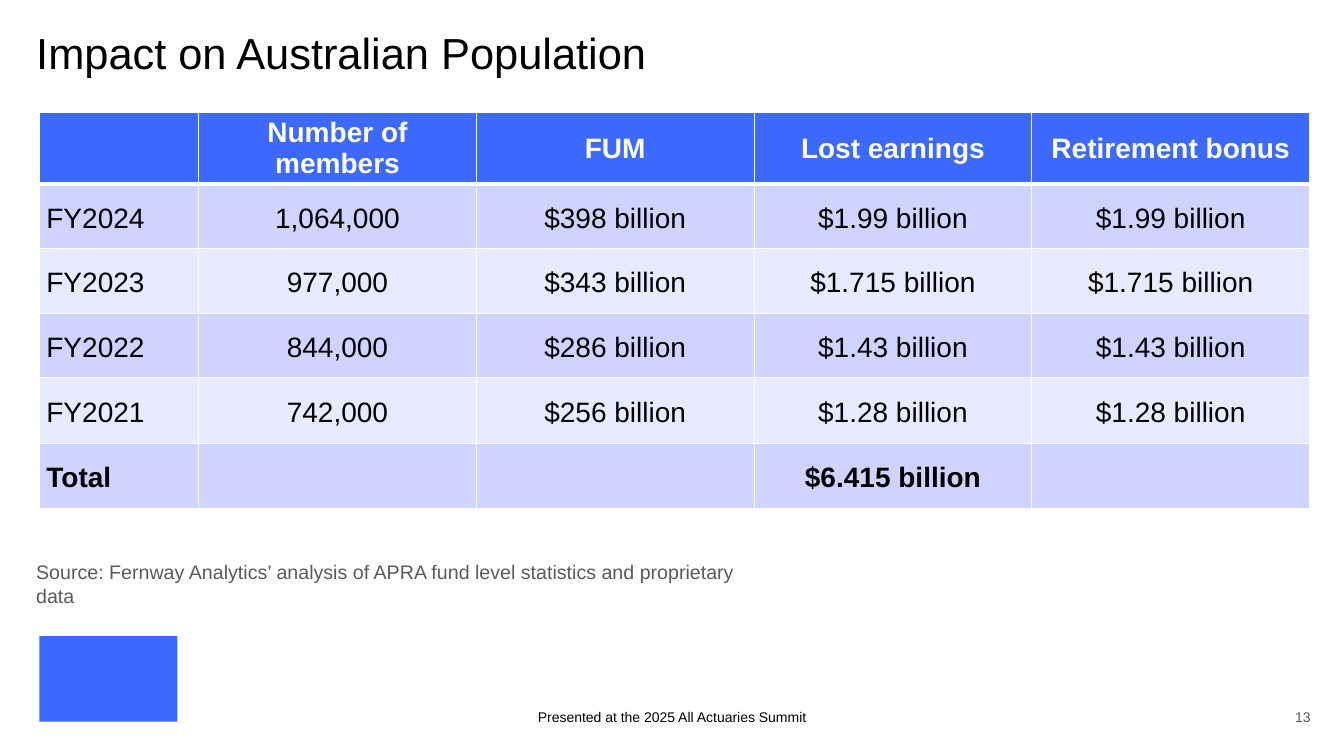
from lxml import etree
from pptx import Presentation
from pptx import util as u
from pptx.dml.color import RGBColor
from pptx.enum import shapes, text
from pptx.oxml import ns

TITLE = "Impact on Australian Population"
HEAD = ["", "Number of members", "FUM", "Lost earnings", "Retirement bonus"]
YEARS = [
    ("FY2024", "1,064,000", "$398 billion", "$1.99 billion", "$1.99 billion"),
    ("FY2023", "977,000", "$343 billion", "$1.715 billion", "$1.715 billion"),
    ("FY2022", "844,000", "$286 billion", "$1.43 billion", "$1.43 billion"),
    ("FY2021", "742,000", "$256 billion", "$1.28 billion", "$1.28 billion"),
]
TOTAL = ("Total", "", "", "$6.415 billion", "")
SOURCE = ("Source: Fernway Analytics’ analysis of APRA fund level "
          "statistics and proprietary data")
EVENT = "Presented at the 2025 All Actuaries Summit"
PAGE = "13"

THEME = {
    "font": "Arial", "blue": "3C69FF", "white": "FFFFFF", "ink": "000000",
    "grey": "5B5B5B", "bands": ("CED4FF", "E8EBFF"),
    "title": 31, "cell": 20, "note": 14, "foot": 10,
}
WIDE, HIGH = 13.33, 7.5
LEFT, TOP, SPAN = 0.39, 1.12, 12.6
FIRST = 1.58
ROWS = (0.63, 0.64, 0.64, 0.64, 0.65, 0.65)
FOOT = 7.0
ALIGN = text.PP_ALIGN
ANCHOR = text.MSO_ANCHOR


def write(frame, words, size, color="ink", bold=False, align=ALIGN.LEFT,
          lead=None, after=None):
    para = frame.paragraphs[0]
    para.alignment = align
    if lead:
        para.line_spacing = lead
    if after:
        para.space_after = u.Pt(after)
    run = para.add_run()
    run.text = words
    run.font.name = THEME["font"]
    run.font.size = u.Pt(THEME[size])
    run.font.bold = bold
    run.font.color.rgb = RGBColor.from_string(THEME[color])


def label(slide, words, place, size, inset=0, anchor=ANCHOR.TOP, **form):
    frame = slide.shapes.add_textbox(*map(u.Inches, place)).text_frame
    frame.word_wrap = True
    frame.vertical_anchor = anchor
    frame.margin_left = frame.margin_right = u.Inches(inset)
    frame.margin_top = frame.margin_bottom = u.Inches(inset / 2)
    write(frame, words, size, **form)


def border(cell, side, width):
    line = etree.SubElement(cell._tc.get_or_add_tcPr(), ns.qn("a:ln" + side),
                            w=str(u.Pt(width)))
    fill = etree.SubElement(line, ns.qn("a:solidFill"))
    etree.SubElement(fill, ns.qn("a:srgbClr"), val=THEME["white"])


def paint(cell, color):
    cell.fill.solid()
    cell.fill.fore_color.rgb = RGBColor.from_string(color)


def grid(slide):
    data = [HEAD, *YEARS, TOTAL]
    table = slide.shapes.add_table(
        len(data), len(HEAD), u.Inches(LEFT), u.Inches(TOP),
        u.Inches(SPAN), u.Inches(sum(ROWS))).table
    for col, part in enumerate(table.columns):
        part.width = u.Inches((SPAN - FIRST) / (len(HEAD) - 1) if col else FIRST)
    for row, values in enumerate(data):
        table.rows[row].height = u.Inches(ROWS[row])
        for col, words in enumerate(values):
            cell = table.cell(row, col)
            for side in "LRTB":
                thick = (row, side) in ((0, "B"), (1, "T"))
                border(cell, side, 3 if thick else 1)
            paint(cell, THEME["bands"][(row - 1) % 2] if row else THEME["blue"])
            cell.vertical_anchor = ANCHOR.MIDDLE
            cell.margin_left = cell.margin_right = u.Inches(0.07)
            cell.margin_top = cell.margin_bottom = u.Inches(0.02)
            if words:
                write(cell.text_frame, words, "cell",
                      color="ink" if row else "white",
                      bold=row in (0, len(data) - 1),
                      align=ALIGN.CENTER if col else ALIGN.LEFT,
                      lead=1.15 if row else None, after=8)


def main():
    deck = Presentation()
    deck.slide_width, deck.slide_height = u.Inches(WIDE), u.Inches(HIGH)
    slide = deck.slides.add_slide(deck.slide_layouts[6])
    mark = slide.shapes.add_shape(
        shapes.MSO_SHAPE.RECTANGLE, *map(u.Inches, (LEFT, 6.31, 1.37, 0.85)))
    mark.shadow.inherit = False
    mark.fill.solid()
    mark.fill.fore_color.rgb = RGBColor.from_string(THEME["blue"])
    mark.line.fill.background()
    label(slide, TITLE, (0.36, 0.32, 11.76, 0.7), "title", lead=0.9)
    grid(slide)
    label(slide, SOURCE, (0.26, 5.51, 7.41, 0.58), "note", inset=0.1,
          color="grey")
    label(slide, EVENT, ((WIDE - 4.5) / 2, FOOT, 4.5, 0.2), "foot",
          anchor=ANCHOR.BOTTOM, align=ALIGN.CENTER)
    label(slide, PAGE, (12.54, FOOT, 0.46, 0.2), "foot",
          anchor=ANCHOR.BOTTOM, align=ALIGN.RIGHT, color="grey")
    deck.save("out.pptx")


if __name__ == "__main__":
    main()
